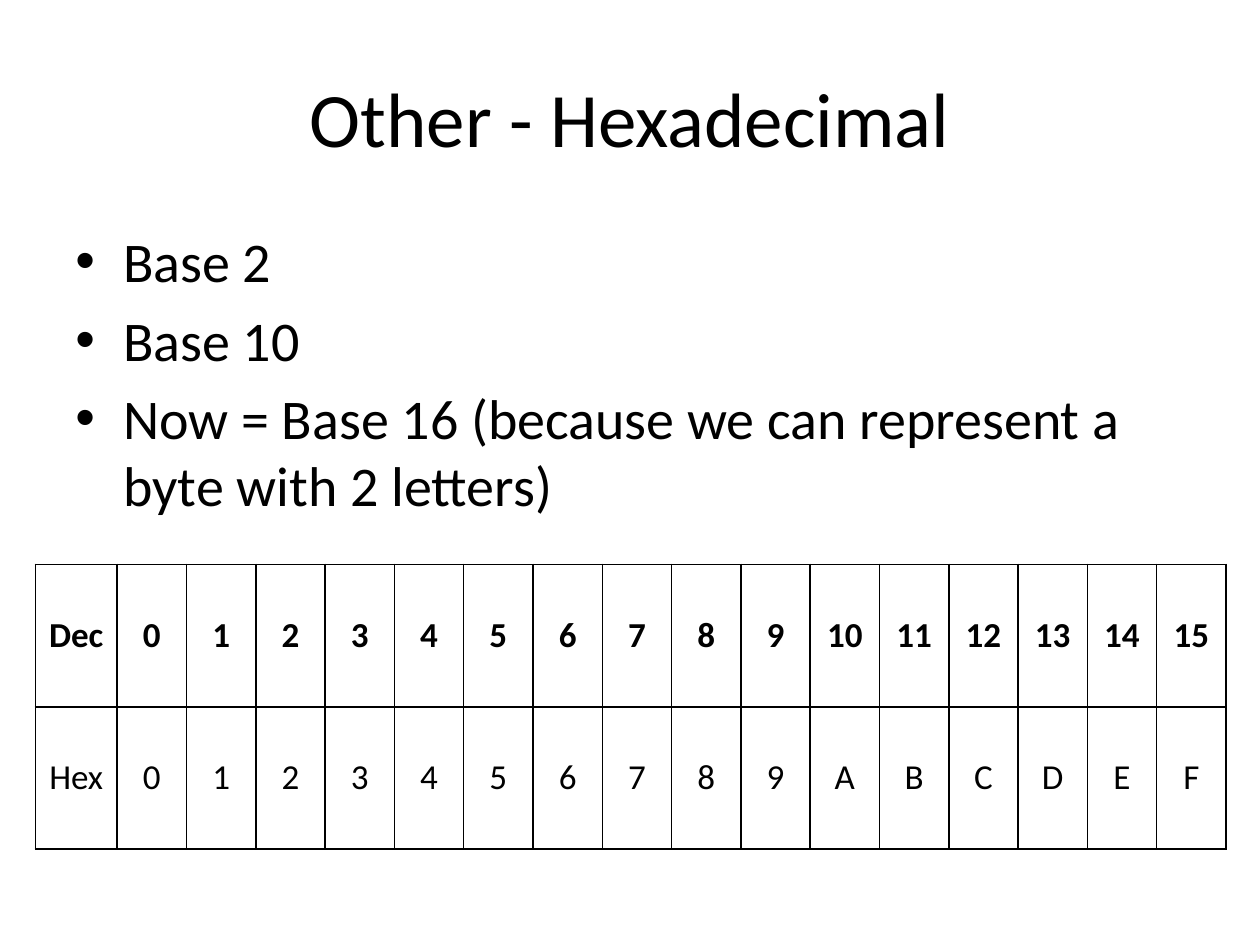
from lxml import etree
from pptx import Presentation
from pptx.dml.color import RGBColor
from pptx.enum.text import MSO_ANCHOR, PP_ALIGN
from pptx.oxml.ns import qn
from pptx.util import Inches, Pt

LEFT, CENTER = PP_ALIGN.LEFT, PP_ALIGN.CENTER
TOP, MIDDLE = MSO_ANCHOR.TOP, MSO_ANCHOR.MIDDLE

COLORS = {"text": "000000", "border": "000000", "cell": "FFFFFF"}
FONT = "Calibri"
SLIDE_WIDTH, SLIDE_HEIGHT = 10, 7.5
MARGIN = 0.05 * SLIDE_WIDTH
CONTENT_WIDTH = SLIDE_WIDTH - 2 * MARGIN

BULLETS = [
    "Base 2",
    "Base 10",
    "Now = Base 16 (because we can represent a byte with 2 letters)",
]
BASE = 16
TABLE_ROWS = [
    ["Dec"] + [str(number) for number in range(BASE)],
    ["Hex"] + [f"{number:X}" for number in range(BASE)],
]
LABEL_WIDTH, DIGIT_WIDTH, ROW_HEIGHT = 0.65, 0.55, 1.13


def write_text(paragraph, text, size=20, bold=False, align=LEFT, space_before=0):
    paragraph.alignment = align
    paragraph.space_before = Pt(space_before)
    run = paragraph.add_run()
    run.text = text
    run.font.name = FONT
    run.font.size = Pt(size)
    run.font.bold = bold
    run.font.color.rgb = RGBColor.from_string(COLORS["text"])


def add_bullet(paragraph, indent=0.38):
    properties = paragraph._p.get_or_add_pPr()
    properties.set("marL", str(Inches(indent)))
    properties.set("indent", str(-Inches(indent)))
    etree.SubElement(properties, qn("a:buFont")).set("typeface", "Arial")
    etree.SubElement(properties, qn("a:buChar")).set("char", "•")


def add_text_frame(slide, top, height, anchor=TOP):
    box = slide.shapes.add_textbox(
        Inches(MARGIN), Inches(top), Inches(CONTENT_WIDTH), Inches(height)
    )
    frame = box.text_frame
    frame.word_wrap = True
    frame.vertical_anchor = anchor
    return frame


def add_title(slide, text):
    frame = add_text_frame(slide, 0.04 * SLIDE_HEIGHT, 1.25, anchor=MIDDLE)
    write_text(frame.paragraphs[0], text, size=44, align=CENTER)


def add_bullet_list(slide, items, size=32):
    frame = add_text_frame(slide, 1.75, 0.66 * SLIDE_HEIGHT)
    for index, item in enumerate(items):
        paragraph = frame.add_paragraph() if index else frame.paragraphs[0]
        write_text(paragraph, item, size=size, space_before=0.2 * size)
        add_bullet(paragraph)


def set_borders(cell, width=1):
    """Draw all four cell edges; the lines must come before the fill."""
    properties = cell._tc.get_or_add_tcPr()
    for position, edge in enumerate(("a:lnL", "a:lnR", "a:lnT", "a:lnB")):
        line = etree.Element(qn(edge), w=str(Pt(width)))
        fill = etree.SubElement(line, qn("a:solidFill"))
        etree.SubElement(fill, qn("a:srgbClr")).set("val", COLORS["border"])
        properties.insert(position, line)


def add_number_table(slide, rows):
    widths = [LABEL_WIDTH] + [DIGIT_WIDTH] * BASE
    table = slide.shapes.add_table(
        len(rows), len(widths), Inches(0.28), Inches(4.48),
        Inches(sum(widths)), Inches(ROW_HEIGHT * len(rows)),
    ).table
    for column, width in zip(table.columns, widths):
        column.width = Inches(width)
    for row_index, values in enumerate(rows):
        table.rows[row_index].height = Inches(ROW_HEIGHT)
        for column_index, value in enumerate(values):
            cell = table.cell(row_index, column_index)
            cell.vertical_anchor = MIDDLE
            cell.fill.solid()
            cell.fill.fore_color.rgb = RGBColor.from_string(COLORS["cell"])
            set_borders(cell)
            write_text(cell.text_frame.paragraphs[0], value,
                       bold=row_index == 0, align=CENTER)


def main():
    presentation = Presentation()
    presentation.slide_width = Inches(SLIDE_WIDTH)
    presentation.slide_height = Inches(SLIDE_HEIGHT)
    slide = presentation.slides.add_slide(presentation.slide_layouts[6])
    add_title(slide, "Other - Hexadecimal")
    add_bullet_list(slide, BULLETS)
    add_number_table(slide, TABLE_ROWS)
    presentation.save("out.pptx")


if __name__ == "__main__":
    main()
